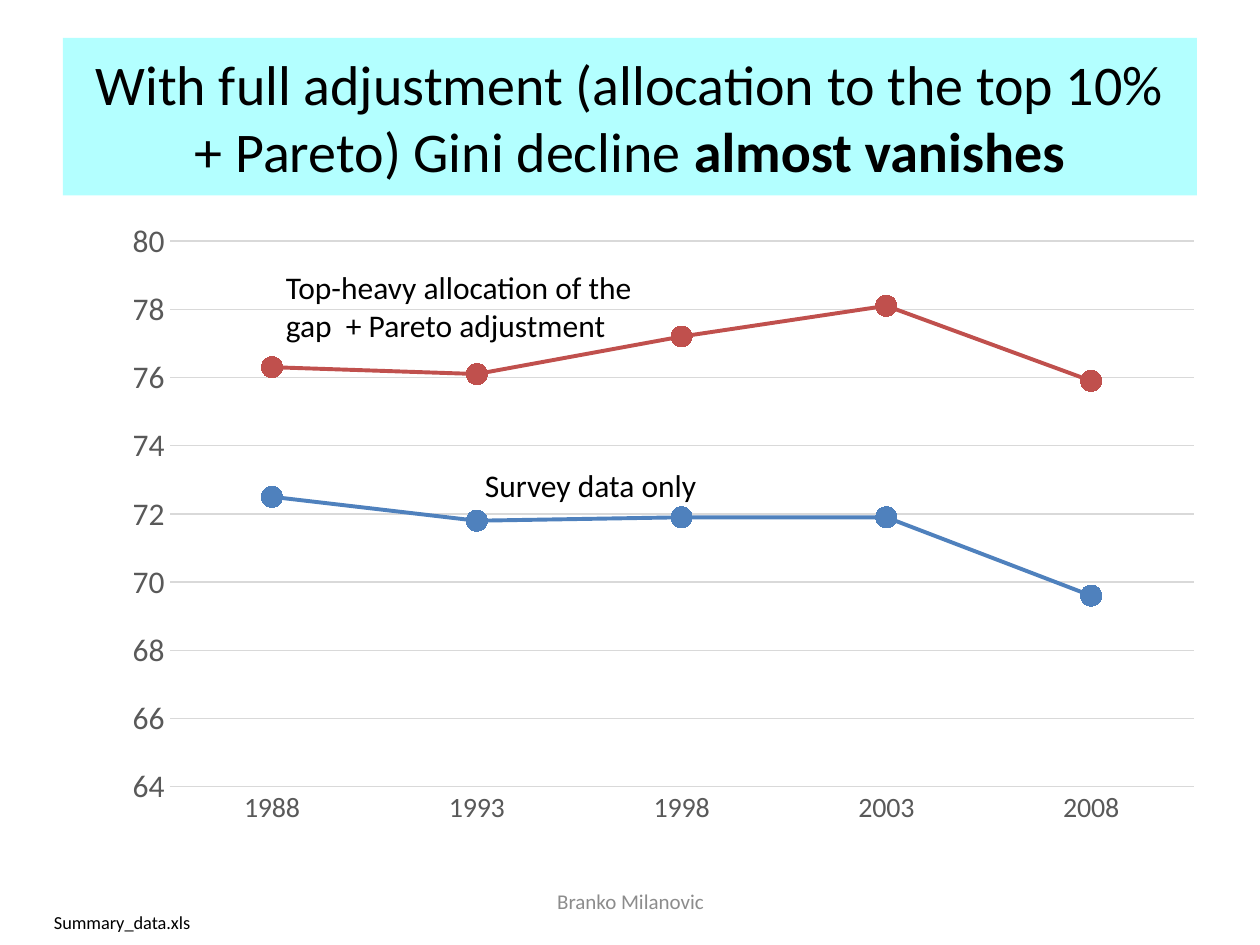
from collections import namedtuple

from lxml.etree import SubElement
from pptx import Presentation
from pptx.chart.data import CategoryChartData
from pptx.dml.color import RGBColor
from pptx.enum.chart import XL_CHART_TYPE, XL_MARKER_STYLE, XL_TICK_MARK
from pptx.enum.shapes import MSO_SHAPE
from pptx.enum.text import MSO_ANCHOR, PP_ALIGN
from pptx.oxml.ns import qn
from pptx.util import Emu, Pt

PX = 9144
FONT = "Calibri"
BLACK = RGBColor(0x00, 0x00, 0x00)
FOOTER_GRAY = RGBColor(0x8C, 0x8C, 0x8C)
AXIS_GRAY = RGBColor(0x59, 0x59, 0x59)
GRID_GRAY = RGBColor(0xD9, 0xD9, 0xD9)
AQUA = RGBColor(0xB3, 0xFF, 0xFF)
BLUE = RGBColor(0x4F, 0x81, 0xBD)
RED = RGBColor(0xC0, 0x50, 0x4D)

Box = namedtuple("Box", "left top width height")

YEARS = ("1988", "1993", "1998", "2003", "2008")
SERIES = (
    ("Survey data only", (72.5, 71.8, 71.9, 71.9, 69.6), BLUE),
    ("Top-heavy allocation", (76.3, 76.1, 77.2, 78.1, 75.9), RED),
)
PLOT = {"x": 0.094, "y": 0.033, "w": 0.903, "h": 0.875}


def to_emu(box):
    """Turn a box in px into EMU lengths."""
    return [Emu(length * PX) for length in box]


def style_font(font, size, color, bold=False):
    """Set the typeface, size, colour and weight of a font."""
    font.name = FONT
    font.size = Pt(size)
    font.color.rgb = color
    font.bold = bold


def write_text(shape, *spans, size, color=BLACK, align=PP_ALIGN.LEFT,
               anchor=MSO_ANCHOR.TOP):
    """Write one paragraph of (text, bold) spans into a shape."""
    frame = shape.text_frame
    frame.word_wrap = True
    frame.vertical_anchor = anchor
    para = frame.paragraphs[0]
    para.alignment = align
    for text, bold in spans:
        span = para.add_run()
        span.text = text
        style_font(span.font, size, color, bold)


def add_title(page, box):
    """Add the filled title band."""
    band = page.shapes.add_shape(MSO_SHAPE.RECTANGLE, *to_emu(box))
    band.shadow.inherit = False
    band.fill.solid()
    band.fill.fore_color.rgb = AQUA
    band.line.fill.background()
    write_text(
        band,
        ("With full adjustment (allocation to the top 10% + Pareto) Gini decline ", False),
        ("almost vanishes", True),
        size=32, align=PP_ALIGN.CENTER, anchor=MSO_ANCHOR.MIDDLE,
    )


def add_label(page, box, text, **text_format):
    """Add a plain text box."""
    label = page.shapes.add_textbox(*to_emu(box))
    write_text(label, (text, False), **text_format)


def style_axes(chart):
    """Format the year axis, the Gini axis and its gridlines."""
    years, gini = chart.category_axis, chart.value_axis
    for axis, size in ((years, 16), (gini, 18)):
        axis.major_tick_mark = XL_TICK_MARK.NONE
        axis.minor_tick_mark = XL_TICK_MARK.NONE
        style_font(axis.tick_labels.font, size, AXIS_GRAY)
    gini.minimum_scale, gini.maximum_scale, gini.major_unit = 64, 80, 2
    gini.tick_labels.number_format = "0"
    gini.tick_labels.number_format_is_linked = False
    gini.format.line.fill.background()
    gini.has_major_gridlines = True
    for line in (years.format.line, gini.major_gridlines.format.line):
        line.color.rgb = GRID_GRAY
        line.width = Pt(0.75)


def style_series(series, color):
    """Colour a series line and its round markers."""
    series.smooth = False
    series.format.line.color.rgb = color
    series.format.line.width = Pt(2.25)
    marker = series.marker
    marker.style = XL_MARKER_STYLE.CIRCLE
    marker.size = 12
    marker.format.fill.solid()
    marker.format.fill.fore_color.rgb = color
    marker.format.line.color.rgb = color


def place_plot(chart):
    """Fix the inner plot area as fractions of the chart."""
    plot_area = chart.element.find(".//" + qn("c:plotArea"))
    layout = plot_area.find(qn("c:layout"))
    if layout is None:
        layout = SubElement(plot_area, qn("c:layout"))
        plot_area.insert(0, layout)
    manual = SubElement(layout, qn("c:manualLayout"))
    settings = {"layoutTarget": "inner", "xMode": "edge", "yMode": "edge", **PLOT}
    for name, value in settings.items():
        SubElement(manual, qn(f"c:{name}")).set("val", str(value))


def add_gini_chart(page, box):
    """Add the line chart of the two Gini series."""
    data = CategoryChartData(number_format="0.0")
    data.categories = YEARS
    for name, values, _ in SERIES:
        data.add_series(name, values)
    chart = page.shapes.add_chart(
        XL_CHART_TYPE.LINE_MARKERS, *to_emu(box), data).chart
    chart.has_title = False
    chart.has_legend = False
    style_font(chart.font, 10, BLACK)
    chart.plots[0].vary_by_categories = False
    style_axes(chart)
    for series, (_, _, color) in zip(chart.plots[0].series, SERIES):
        style_series(series, color)
    place_plot(chart)


def main():
    """Build and save the deck."""
    deck = Presentation()
    deck.slide_width, deck.slide_height = Emu(1000 * PX), Emu(750 * PX)
    page = deck.slides.add_slide(deck.slide_layouts[6])
    add_title(page, Box(50, 30, 900, 125))
    add_gini_chart(page, Box(50, 175, 900, 495))
    add_label(page, Box(375, 365, 250, 40), "Survey data only", size=18)
    add_label(page, Box(217, 208, 300, 71),
              "Top-heavy allocation of the gap  + Pareto adjustment", size=18)
    add_label(page, Box(342, 695, 317, 40), "Branko Milanovic", size=12,
              color=FOOTER_GRAY, align=PP_ALIGN.CENTER, anchor=MSO_ANCHOR.MIDDLE)
    add_label(page, Box(33, 718, 292, 28), "Summary_data.xls", size=10.5)
    deck.save("out.pptx")


if __name__ == "__main__":
    main()
